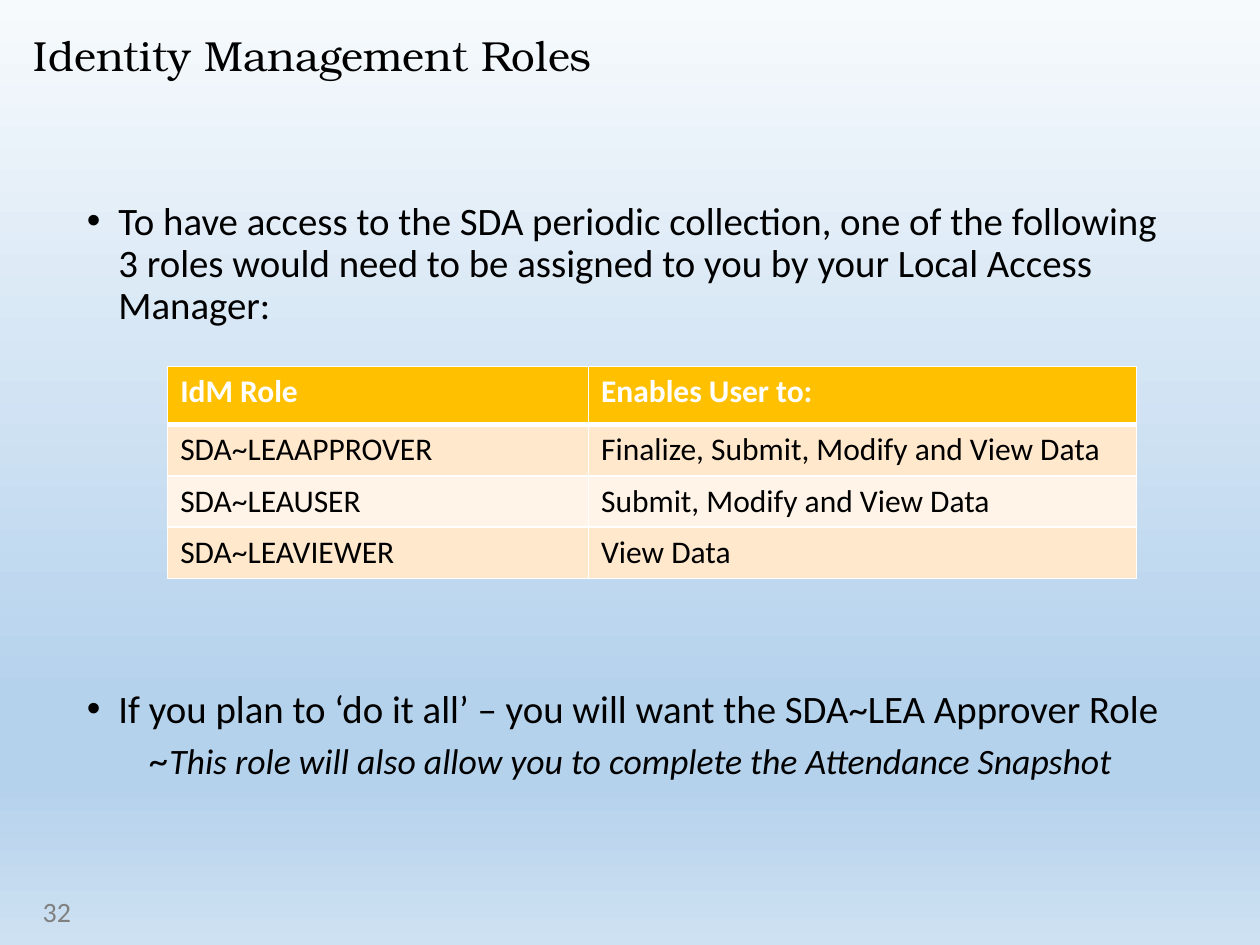
"""Build the slide on identity management roles."""
import dataclasses

import lxml.etree
import pptx
import pptx.dml.color
import pptx.enum.text
import pptx.oxml.ns
import pptx.util

Pt = pptx.util.Pt
qn = pptx.oxml.ns.qn
Anchor = pptx.enum.text.MSO_ANCHOR


@dataclasses.dataclass(frozen=True)
class Theme:
    ink: str = "000000"
    white: str = "FFFFFF"
    grey: str = "808080"
    gold: str = "FFC000"
    bands: tuple = ("FFE8CC", "FFF4E7")
    sky: tuple = ((0, "F7FAFD"), (74, "B5D2EC"), (83, "B5D2EC"), (100, "CEE1F2"))
    serif: str = "TeX Gyre Bonum"
    sans: str = "Calibri"
    head: float = 24
    body: float = 22.2
    note: float = 20.4
    cell: float = 18
    foot: float = 16


LOOK = Theme()

ROLES = (
    ("IdM Role", "Enables User to:"),
    ("SDA~LEAAPPROVER", "Finalize, Submit, Modify and View Data"),
    ("SDA~LEAUSER", "Submit, Modify and View Data"),
    ("SDA~LEAVIEWER", "View Data"),
)


def rgb(code):
    return pptx.dml.color.RGBColor.from_string(code)


def put(item, values):
    for name, value in values.items():
        setattr(item, name, value)


def place(shape, left, top, width, height):
    put(shape, dict(left=Pt(left), top=Pt(top), width=Pt(width), height=Pt(height)))


def frame(shape, anchor=Anchor.TOP, **insets):
    put(shape.text_frame, dict(word_wrap=True, vertical_anchor=anchor,
                               auto_size=pptx.enum.text.MSO_AUTO_SIZE.NONE))
    put(shape.text_frame, {f"margin_{side}": Pt(gap) for side, gap in insets.items()})


def write(para, text, size, color=LOOK.ink, face=LOOK.sans, **style):
    run = para.add_run()
    run.text = text
    put(run.font, dict(size=Pt(size), name=face, **style))
    run.font.color.rgb = rgb(color)


def indent(para, left, hang, bullet=None):
    props = para._p.get_or_add_pPr()
    put_xml = dict(marL=str(Pt(left)), indent=str(Pt(hang)))
    props.attrib.update(put_xml)
    if bullet:
        lxml.etree.SubElement(props, qn("a:buChar"), char=bullet)
    else:
        lxml.etree.SubElement(props, qn("a:buNone"))


def paint(slide):
    fill = slide.background.fill
    fill.gradient()
    fill.gradient_angle = 270
    stops = next(slide.element.iter(qn("a:gsLst")))
    for stop in list(stops):
        stops.remove(stop)
    for spot, code in LOOK.sky:
        stop = lxml.etree.SubElement(stops, qn("a:gs"), pos=str(spot * 1000))
        lxml.etree.SubElement(stop, qn("a:srgbClr"), val=code)


def title(slide, text):
    shape = slide.shapes.title
    place(shape, 19.4, 20.2, 478.8, 59.8)
    frame(shape, left=0, top=0, right=0, bottom=0)
    para = shape.text_frame.paragraphs[0]
    put(para, dict(alignment=pptx.enum.text.PP_ALIGN.LEFT, line_spacing=0.9))
    write(para, text, LOOK.head, face=LOOK.serif)


def points(slide):
    shape = slide.placeholders[1]
    place(shape, 49.7, 115.2, 620.6, 365.8)
    frame(shape, left=0, top=0, right=0, bottom=3.6)
    text = shape.text_frame
    need, plan, note = text.paragraphs[0], text.add_paragraph(), text.add_paragraph()
    for para, gap in ((need, 0), (plan, 207), (note, 5)):
        put(para, dict(line_spacing=0.9, space_before=Pt(gap), space_after=Pt(0)))
    for para in (need, plan):
        indent(para, 18, -18, "•")
    note.level = 1
    indent(note, 36, 0)
    write(need, "To have access to the SDA periodic collection, one of the following "
                "3 roles would need to be assigned to you by your Local Access Manager:",
          LOOK.body)
    write(plan, "If you plan to ‘do it all’ – you will want the SDA~LEA Approver Role",
          LOOK.body)
    write(note, "~", LOOK.body, italic=True)
    write(note, "This role will also allow you to complete the Attendance Snapshot",
          LOOK.note, italic=True)


def edge(cell, widths):
    props = cell._tc.get_or_add_tcPr()
    for spot, (side, width) in enumerate(widths.items()):
        line = lxml.etree.Element(qn(f"a:ln{side}"), w=str(Pt(width)))
        fill = lxml.etree.SubElement(line, qn("a:solidFill"))
        lxml.etree.SubElement(fill, qn("a:srgbClr"), val=LOOK.white)
        props.insert(spot, line)


def table(slide, rows):
    shape = slide.shapes.add_table(len(rows), len(rows[0]),
                                   Pt(95.8), Pt(209.5), Pt(553.7), Pt(121))
    grid = shape.table
    grid.horz_banding = False
    for col, width in zip(grid.columns, (240.5, 313.2)):
        col.width = Pt(width)
    for r, texts in enumerate(rows):
        top = r == 0
        grid.rows[r].height = Pt(33.1 if top else 29.3)
        for c, text in enumerate(texts):
            cell = grid.cell(r, c)
            cell.fill.solid()
            cell.fill.fore_color.rgb = rgb(LOOK.gold if top else LOOK.bands[(r - 1) % 2])
            edge(cell, dict(L=1, R=1, T=3 if r == 1 else 1, B=3 if top else 1))
            write(cell.text_frame.paragraphs[0], text, LOOK.cell,
                  LOOK.white if top else LOOK.ink, bold=top)


def number(slide, text):
    shape = slide.shapes.add_textbox(Pt(17.3), Pt(506.2), Pt(162), Pt(28.8))
    frame(shape, Anchor.MIDDLE)
    write(shape.text_frame.paragraphs[0], text, LOOK.foot, LOOK.grey)


def main():
    deck = pptx.Presentation()
    put(deck, dict(slide_width=Pt(720), slide_height=Pt(540)))
    slide = deck.slides.add_slide(deck.slide_layouts[1])
    paint(slide)
    title(slide, "Identity Management Roles")
    points(slide)
    number(slide, "32")
    table(slide, ROLES)
    deck.save("out.pptx")


if __name__ == "__main__":
    main()
